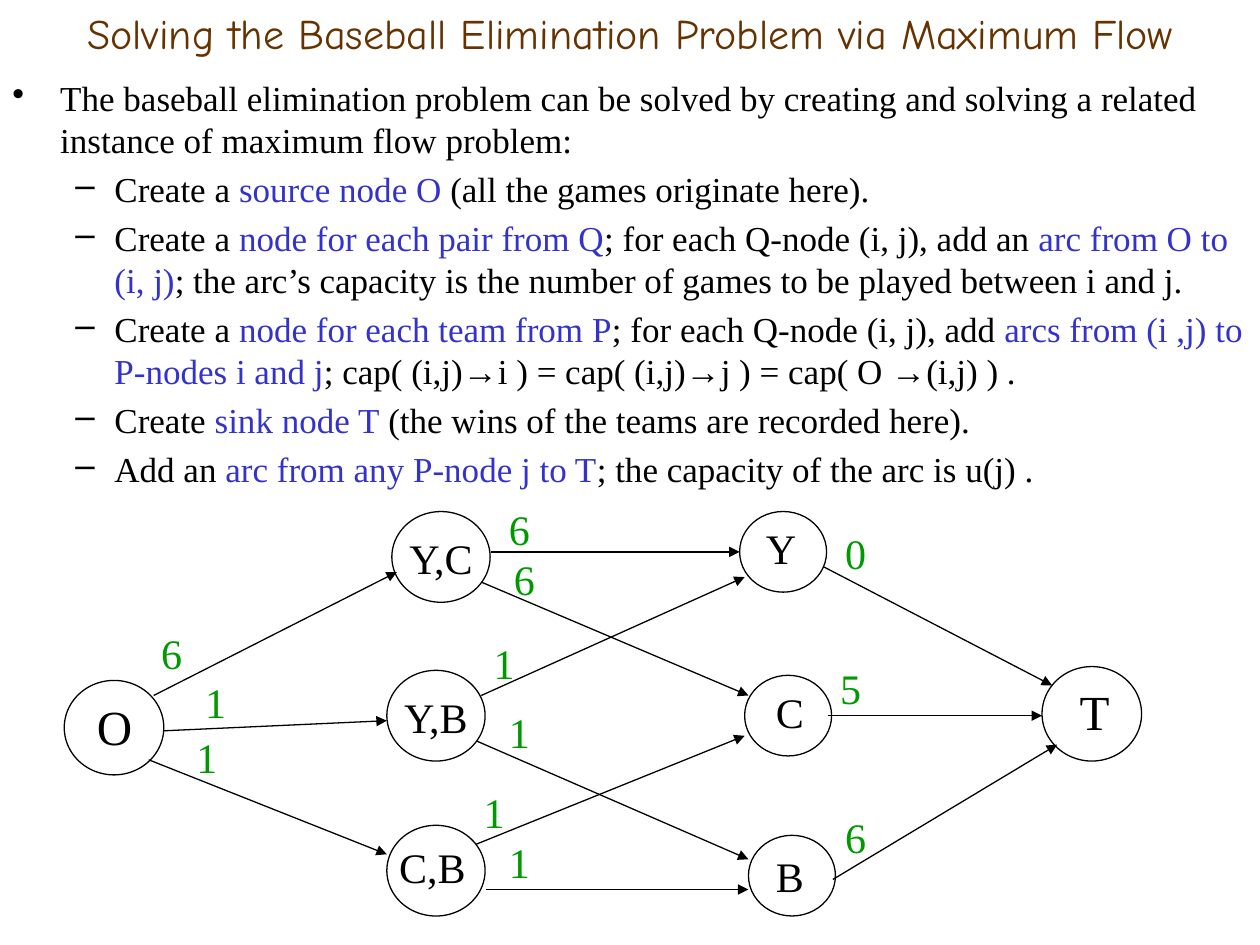
import pptx
import pptx.dml.color
import pptx.enum.shapes
import pptx.enum.text
import pptx.oxml
import pptx.oxml.ns
import pptx.util

PX = 9144
BLACK = pptx.dml.color.RGBColor(0x00, 0x00, 0x00)
WHITE = pptx.dml.color.RGBColor(0xFF, 0xFF, 0xFF)
BROWN = pptx.dml.color.RGBColor(0x66, 0x33, 0x00)
BLUE = pptx.dml.color.RGBColor(0x33, 0x33, 0xCC)
GREEN = pptx.dml.color.RGBColor(0x00, 0x99, 0x00)
SERIF = "Times New Roman"
LINE_FACTOR = 1.2

TITLE = "Solving the Baseball Elimination Problem via Maximum Flow"
INTRO = ["The baseball elimination problem can be solved by creating and solving "
         "a related instance of maximum flow problem:"]
STEPS = [
    ["Create a ", "source node O", " (all the games originate here)."],
    ["Create a ", "node for each pair from Q", "; for each Q-node (i, j), add an ",
     "arc from O to (i, j)",
     "; the arc’s capacity is the number of games to be played between i and j."],
    ["Create a ", "node for each team from P", "; for each Q-node (i, j), add ",
     "arcs from (i ,j) to P-nodes i and j",
     "; cap( (i,j)→i ) = cap( (i,j)→j ) = cap( O →(i,j) ) ."],
    ["Create ", "sink node T", " (the wins of the teams are recorded here)."],
    ["Add an ", "arc from any P-node j to T", "; the capacity of the arc is u(j) ."],
]

CAPACITIES = [
    ("6", 661, 639), ("1", 146, 576), ("5", 657, 521), ("1", 394, 556),
    ("1", 374, 619), ("6", 398, 434), ("6", 394, 395), ("1", 382, 501),
    ("1", 394, 659), ("0", 661, 414), ("1", 153, 532), ("6", 118, 493),
]
PAIR_NODES = [("Y,C", 311, 406, 4, 12), ("Y,B", 307, 532, 4, 12), ("C,B", 307, 655, 0, 8)]
TEAM_NODES = [("Y", 587, 406, 11, 4), ("C", 591, 536, 15, 4), ("B", 594, 663, 12, 7)]
END_NODES = [("O", 51, 540, 16, 8), ("T", 827, 529, 20, 7)]
ARCS = [
    (122, 552, 315, 454), (130, 580, 307, 572), (118, 603, 307, 678),
    (390, 438, 587, 438), (382, 462, 594, 552), (382, 552, 591, 458),
    (378, 588, 594, 682), (378, 670, 591, 584), (386, 706, 594, 706),
    (654, 450, 835, 544), (657, 568, 827, 568), (661, 698, 839, 591),
]


def scaled(*lengths):
    """Turn px lengths into EMU."""
    return [pptx.util.Emu(length * PX) for length in lengths]


def set_bullet(paragraph, character, margin, hanging):
    """Give a paragraph a bullet and a hanging indent."""
    properties = paragraph._p.get_or_add_pPr()
    properties.set("marL", str(margin * PX))
    properties.set("indent", str(-hanging * PX))
    bullet = pptx.oxml.parse_xml(
        f'<a:buChar {pptx.oxml.ns.nsdecls("a")} char="{character}"/>')
    properties.append(bullet)


def write_text(paragraph, pieces, size=24, font=SERIF, color=BLACK, accent=BLUE,
               alignment=None, line_factor=LINE_FACTOR):
    """Write pieces of text as runs, with every second piece in the accent colour."""
    paragraph.alignment = alignment
    if line_factor:
        paragraph.line_spacing = pptx.util.Pt(size * line_factor)
    for index, piece in enumerate(pieces):
        run = paragraph.add_run()
        run.text = piece
        run.font.size = pptx.util.Pt(size)
        run.font.name = font
        run.font.color.rgb = accent if index % 2 else color


def add_box(slide, left, top, width, height):
    """Add an empty wrapping text box and return its text frame."""
    frame = slide.shapes.add_textbox(*scaled(left, top, width, height)).text_frame
    frame.word_wrap = True
    return frame


def add_label(slide, text, left, top, width, height, **text_format):
    """Add a one-line text box."""
    frame = add_box(slide, left, top, width, height)
    write_text(frame.paragraphs[0], [text], **text_format)
    return frame


def add_body(slide):
    """Add the introduction and the list of construction steps."""
    frame = add_box(slide, 0, 56, 1000, 694)
    introduction = frame.paragraphs[0]
    write_text(introduction, INTRO, size=20)
    set_bullet(introduction, "•", 38, 38)
    for step in STEPS:
        paragraph = frame.add_paragraph()
        paragraph.level = 1
        paragraph.space_before = pptx.util.Pt(4)
        write_text(paragraph, step, size=20)
        set_bullet(paragraph, "–", 81, 31)


def add_nodes(slide, nodes, node_size, label_size, filled=True, size=24):
    """Add a column of circles, then their names on top."""
    for _, left, top, _, _ in nodes:
        circle = slide.shapes.add_shape(
            pptx.enum.shapes.MSO_SHAPE.OVAL, *scaled(left, top, *node_size))
        circle.shadow.inherit = False
        if filled:
            circle.fill.solid()
            circle.fill.fore_color.rgb = WHITE
        else:
            circle.fill.background()
        circle.line.color.rgb = BLACK
        circle.line.width = pptx.util.Pt(0.75)
    for name, left, top, shift_x, shift_y in nodes:
        add_label(slide, name, left + shift_x, top + shift_y, *label_size, size=size)


def add_arc(slide, *ends):
    """Add a straight arrow between two points."""
    arc = slide.shapes.add_connector(
        pptx.enum.shapes.MSO_CONNECTOR.STRAIGHT, *scaled(*ends))
    arc.line.color.rgb = BLACK
    arc.line.width = pptx.util.Pt(0.75)
    namespace = pptx.oxml.ns.nsdecls("a")
    arc.line._get_or_add_ln().append(
        pptx.oxml.parse_xml(f'<a:tailEnd {namespace} type="triangle"/>'))
    arc._element.spPr.append(pptx.oxml.parse_xml(f"<a:effectLst {namespace}/>"))


def main():
    """Build the slide and save it."""
    presentation = pptx.Presentation()
    presentation.slide_width, presentation.slide_height = scaled(1000, 750)
    slide = presentation.slides.add_slide(presentation.slide_layouts[6])
    title = add_label(slide, TITLE, 0, 0, 1000, 52, font="Comic Neue", color=BROWN,
                      alignment=pptx.enum.text.PP_ALIGN.CENTER, line_factor=None)
    title.vertical_anchor = pptx.enum.text.MSO_ANCHOR.MIDDLE
    add_body(slide)
    for capacity, left, top in CAPACITIES:
        add_label(slide, capacity, left, top, 39, 50, color=GREEN)
    add_nodes(slide, PAIR_NODES, (78, 72), (75, 50))
    add_nodes(slide, TEAM_NODES, (69, 64), (43, 50))
    add_nodes(slide, END_NODES, (79, 75), (47, 57), filled=False, size=28)
    for arc in ARCS:
        add_arc(slide, *arc)
    presentation.save("out.pptx")


if __name__ == "__main__":
    main()
